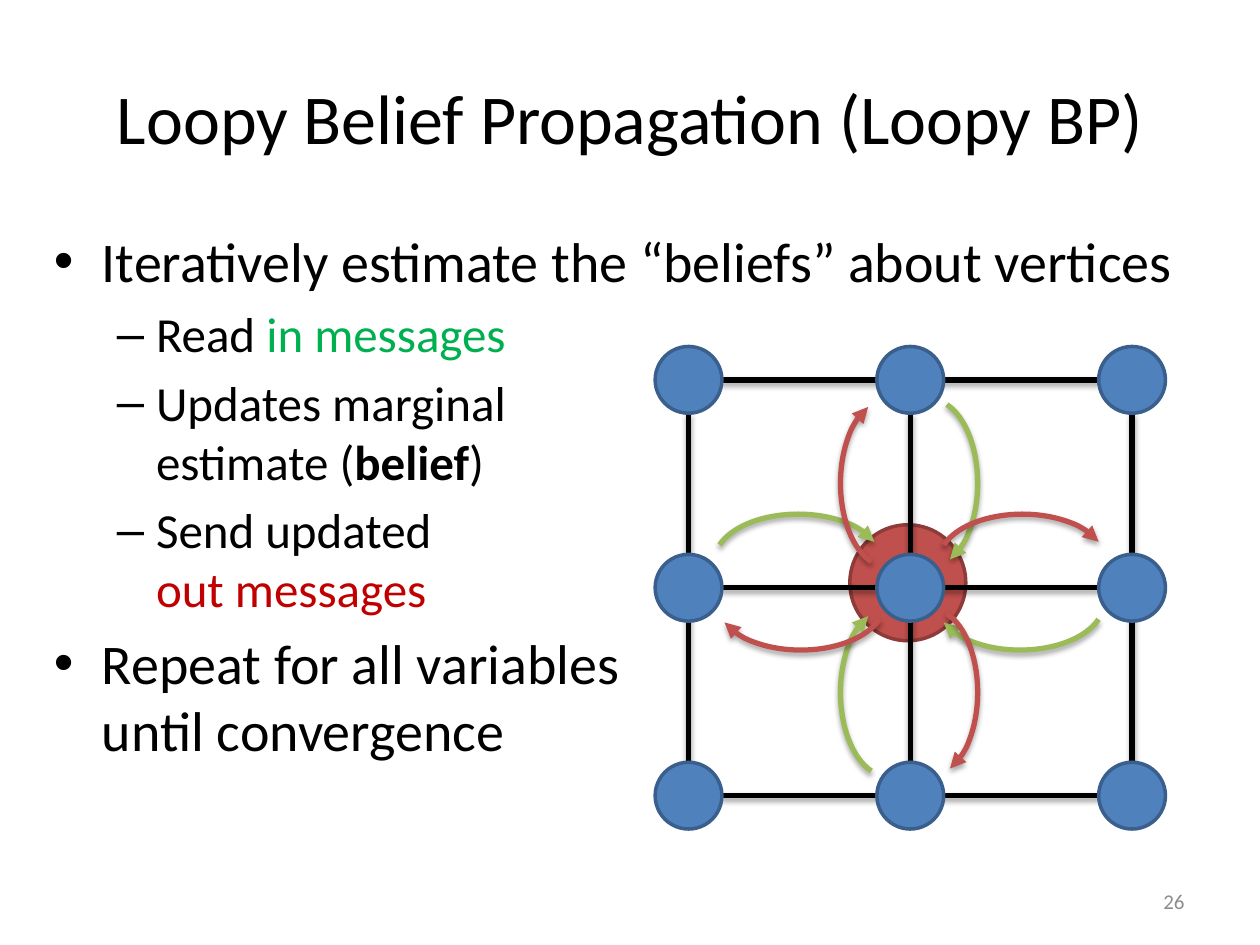
from lxml import etree
from pptx import Presentation
from pptx.dml.color import RGBColor
from pptx.enum.shapes import MSO_CONNECTOR, MSO_SHAPE
from pptx.enum.text import MSO_ANCHOR, PP_ALIGN
from pptx.oxml.ns import qn
from pptx.util import Inches, Pt

OVAL, ARC = MSO_SHAPE.OVAL, MSO_SHAPE.ARC
STRAIGHT = MSO_CONNECTOR.STRAIGHT
MIDDLE = MSO_ANCHOR.MIDDLE
CENTER, RIGHT = PP_ALIGN.CENTER, PP_ALIGN.RIGHT
FONT = "Calibri"
BLACK, GREEN, RED = "000000", "9BBB59", "C0504D"
LEVELS = [("•", 0.38, 0.38, 32), ("–", 0.81, 0.31, 28)]
POINTS = [
    (0, [[("Iteratively estimate the “beliefs” about vertices", BLACK, False)]]),
    (1, [[("Read ", BLACK, False), ("in messages", "00B050", False)]]),
    (1, [[("Updates marginal", BLACK, False)],
         [("estimate (", BLACK, False), ("belief", BLACK, True), (")", BLACK, False)]]),
    (1, [[("Send updated", BLACK, False)], [("out messages", "C00000", False)]]),
    (0, [[("Repeat for all variables", BLACK, False)],
         [("until convergence", BLACK, False)]]),
]


def color(value):
    """Turn a hex string into a colour."""
    return RGBColor.from_string(value)


def add_run(para, text, size, tone=BLACK, bold=False):
    """Add one formatted run to a paragraph."""
    run = para.add_run()
    run.text = text
    font = run.font
    font.name, font.size, font.bold = FONT, Pt(size), bold
    font.color.rgb = color(tone)


def add_tag(parent, tag, **attrs):
    """Append a drawing element to a parent."""
    return etree.SubElement(parent, qn(tag), attrs)


def stroke(shape, tone, width):
    """Set the line of a shape."""
    shape.line.color.rgb = color(tone)
    shape.line.width = Pt(width)


def add_shade(shape):
    """Give a line a soft shadow below it."""
    effects = add_tag(shape._element.spPr, "a:effectLst")
    outer = add_tag(effects, "a:outerShdw", blurRad=str(Pt(3.1)), dist=str(Pt(1.8)),
                    dir="5400000", rotWithShape="0")
    add_tag(add_tag(outer, "a:srgbClr", val=BLACK), "a:alpha", val="35000")


def add_disc(slide, x, y, size, fill, edge):
    """Draw a disc around a centre."""
    disc = slide.shapes.add_shape(OVAL, Inches(x - size / 2), Inches(y - size / 2),
                                  Inches(size), Inches(size))
    disc.shadow.inherit = False
    disc.fill.solid()
    disc.fill.fore_color.rgb = color(fill)
    stroke(disc, edge, 2)


def add_edge(slide, x1, y1, x2, y2):
    """Draw one edge of the graph."""
    edge = slide.shapes.add_connector(STRAIGHT, Inches(x1), Inches(y1),
                                      Inches(x2), Inches(y2))
    stroke(edge, BLACK, 3)
    add_shade(edge)


def add_arcs(slide, x, y, flow, tone):
    """Group four message arcs that turn around a centre."""
    wide, high = 0.75, 1.33
    group = slide.shapes.add_group_shape()
    spots = [(0.16, -0.83 * flow), (0.87 * flow, 0.12),
             (-0.18, 0.83 * flow), (-0.89 * flow, -0.21)]
    for turn, (dx, dy) in enumerate(spots):
        arc = group.shapes.add_shape(ARC, Inches(x + dx - wide / 2),
                                     Inches(y + dy - high / 2),
                                     Inches(wide), Inches(high))
        arc.rotation = 90 * turn
        arc.adjustments[0], arc.adjustments[1] = 169.09, 45.37
        arc.fill.background()
        stroke(arc, tone, 3)
        add_tag(arc.line._get_or_add_ln(), "a:tailEnd", type="triangle")
        add_shade(arc)


def add_graph(slide, left, top, width, height):
    """Draw the grid of vertices with its messages."""
    size = 0.53
    rad = size / 2
    cols = [left + rad + i * (width - size) / 2 for i in range(3)]
    rows = [top + rad + i * (height - size) / 2 for i in range(3)]
    add_disc(slide, cols[1] - 0.02, rows[1] - 0.04, 0.92, RED, "8E3B39")
    for y in rows:
        add_edge(slide, cols[0] + rad, y, cols[2] - rad, y)
    for x in cols:
        add_edge(slide, x, rows[0] + rad, x, rows[2] - rad)
    for y in rows:
        for x in cols:
            add_disc(slide, x, y, size, "4F81BD", "3A5F8C")
    add_arcs(slide, cols[1], rows[1], 1, GREEN)
    add_arcs(slide, cols[1], rows[1], -1, RED)


def add_title(slide, left, top, width, height):
    """Place and fill the title."""
    title = slide.shapes.title
    title.left, title.top = Inches(left), Inches(top)
    title.width, title.height = Inches(width), Inches(height)
    frame = title.text_frame
    frame.vertical_anchor = MIDDLE
    para = frame.paragraphs[0]
    para.alignment = CENTER
    add_run(para, "Loopy Belief Propagation (Loopy BP)", 40)


def add_box(slide, left, top, width, height):
    """Add a wrapping text box and return its frame."""
    box = slide.shapes.add_textbox(Inches(left), Inches(top),
                                   Inches(width), Inches(height))
    box.text_frame.word_wrap = True
    return box.text_frame


def add_points(slide, left, top, width, height):
    """Write the bulleted steps."""
    frame = add_box(slide, left, top, width, height)
    for i, (level, lines) in enumerate(POINTS):
        mark, margin, hang, size = LEVELS[level]
        para = frame.add_paragraph() if i else frame.paragraphs[0]
        para.level = level
        props = para._p.get_or_add_pPr()
        props.set("marL", str(Inches(margin)))
        props.set("indent", str(-Inches(hang)))
        add_tag(props, "a:buFont", typeface="Arial")
        add_tag(props, "a:buChar", char=mark)
        para.space_before = Pt(size * 0.2 if i else 0)
        for j, line in enumerate(lines):
            if j:
                para.add_line_break()
            for text, tone, bold in line:
                add_run(para, text, size, tone, bold)


def add_number(slide, left, top, width, height):
    """Write the slide number."""
    frame = add_box(slide, left, top, width, height)
    frame.vertical_anchor = MIDDLE
    para = frame.paragraphs[0]
    para.alignment = RIGHT
    add_run(para, "26", 12, "8C8C8C")


def main():
    """Build and save the slide."""
    deck = Presentation()
    deck.slide_width, deck.slide_height = Inches(10), Inches(7.5)
    slide = deck.slides.add_slide(deck.slide_layouts[5])
    add_title(slide, 0.5, 0.3, 9, 1.25)
    add_points(slide, 0.33, 1.75, 9.25, 4.67)
    add_graph(slide, 5.2, 2.75, 4.05, 3.83)
    add_number(slide, 7.17, 6.95, 2.33, 0.4)
    deck.save("out.pptx")


if __name__ == "__main__":
    main()
